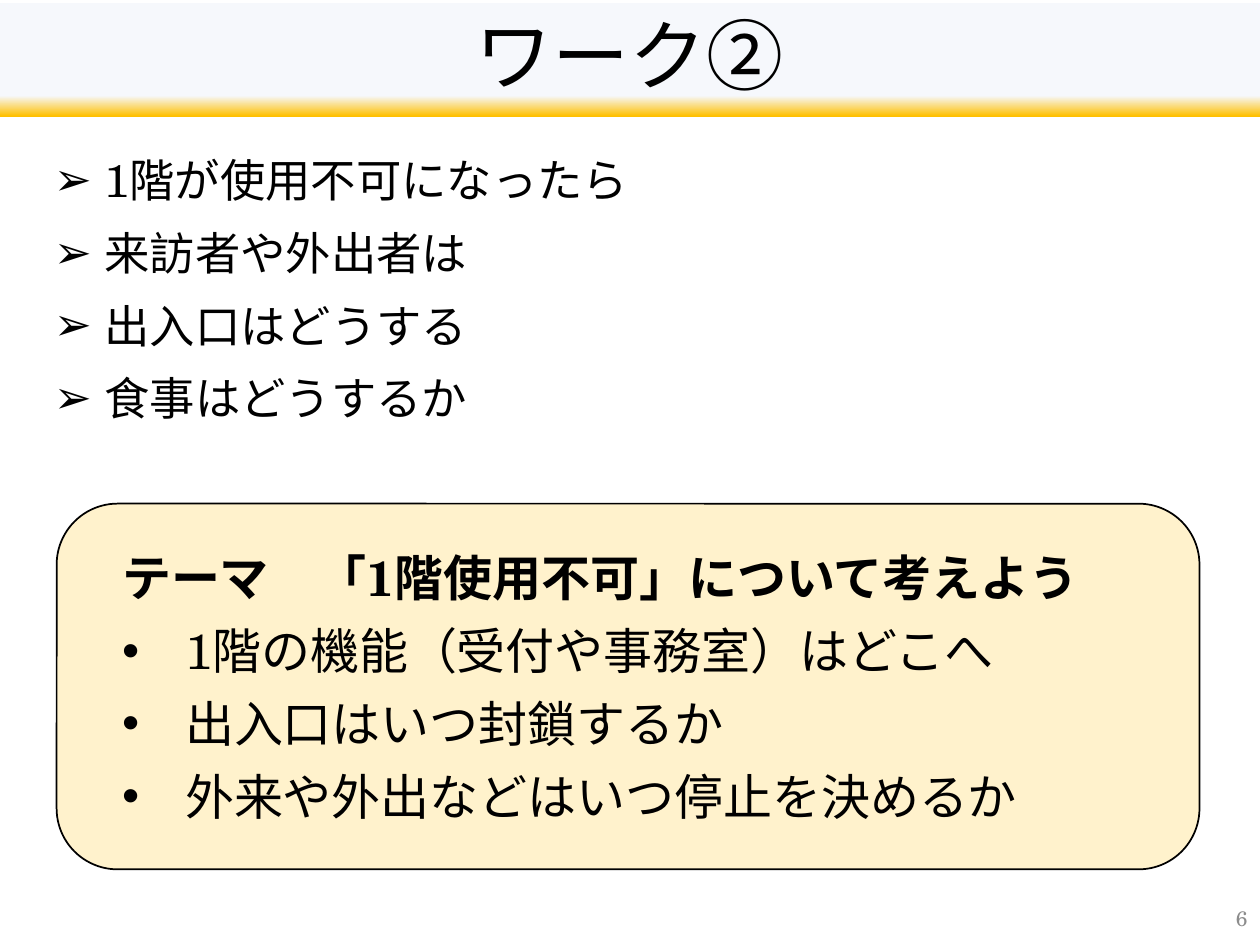
from dataclasses import dataclass

from lxml import etree
from pptx import Presentation
from pptx.dml.color import RGBColor
from pptx.enum.shapes import MSO_SHAPE
from pptx.enum.text import MSO_ANCHOR, PP_ALIGN
from pptx.oxml.ns import qn
from pptx.util import Inches, Pt

RECTANGLE, ROUNDED = MSO_SHAPE.RECTANGLE, MSO_SHAPE.ROUNDED_RECTANGLE
TOP, MIDDLE = MSO_ANCHOR.TOP, MSO_ANCHOR.MIDDLE
LEFT, CENTER, RIGHT = PP_ALIGN.LEFT, PP_ALIGN.CENTER, PP_ALIGN.RIGHT

BLACK = RGBColor(0x00, 0x00, 0x00)
GRAY = RGBColor(0x8C, 0x8C, 0x8C)
CREAM = RGBColor(0xFF, 0xF2, 0xCC)
PALE_BLUE = RGBColor(0xF6, 0xF8, 0xFC)
GOLD = RGBColor(0xFF, 0xC0, 0x00)

FONT = "TeX Gyre Schola"
WIDTH, HEIGHT = Inches(10), Inches(7.5)


@dataclass(frozen=True)
class Area:
    """A rectangle in shares of the slide's width and height."""
    left: float
    top: float
    width: float
    height: float

    def lengths(self) -> tuple[int, int, int, int]:
        return (int(self.left * WIDTH), int(self.top * HEIGHT),
                int(self.width * WIDTH), int(self.height * HEIGHT))


@dataclass(frozen=True)
class TextStyle:
    size: float
    color: RGBColor = BLACK
    align: PP_ALIGN = LEFT
    anchor: MSO_ANCHOR = MIDDLE
    line_spacing: float = 1.0
    space_after: float = 0
    indent: float = 0  # left margin in inches
    hanging: float = 0  # hanging bullet width in inches


@dataclass(frozen=True)
class Line:
    text: str
    bullet: str = ""
    bold: bool = False


TITLE_AREA = Area(0, 0.003, 1, 0.12)
QUESTION_AREA = Area(0.033, 0.147, 0.934, 0.31)
THEME_AREA = Area(0.045, 0.533, 0.907, 0.387)
NUMBER_AREA = Area(0.775, 0.945, 0.225, 0.053)

TITLE_STYLE = TextStyle(44, align=CENTER, line_spacing=0.9)
QUESTION_STYLE = TextStyle(25.9, anchor=TOP, line_spacing=1.14,
                           space_after=6, indent=0.4, hanging=0.4)
THEME_STYLE = TextStyle(28, space_after=8, indent=0.78, hanging=0.5)
NUMBER_STYLE = TextStyle(12, color=GRAY, align=RIGHT)

QUESTIONS = [Line(text, "➢") for text in (
    "1階が使用不可になったら",
    "来訪者や外出者は",
    "出入口はどうする",
    "食事はどうするか",
)]
THEME = [Line("テーマ　「1階使用不可」について考えよう", bold=True)] + [
    Line(text, "•") for text in (
        "1階の機能（受付や事務室）はどこへ",
        "出入口はいつ封鎖するか",
        "外来や外出などはいつ停止を決めるか",
    )]


def set_bullet(paragraph, bullet: str, style: TextStyle) -> None:
    properties = paragraph._p.get_or_add_pPr()
    properties.set("marL", str(Inches(style.indent)))
    properties.set("indent", str(-Inches(style.hanging)))
    if bullet:
        etree.SubElement(properties, qn("a:buFont")).set("typeface", "Arial")
        etree.SubElement(properties, qn("a:buChar")).set("char", bullet)
    else:
        etree.SubElement(properties, qn("a:buNone"))


def write_lines(shape, lines: list[Line], style: TextStyle) -> None:
    text_frame = shape.text_frame
    text_frame.word_wrap = True
    text_frame.vertical_anchor = style.anchor
    text_frame.text = "\n".join(line.text for line in lines)
    for paragraph, line in zip(text_frame.paragraphs, lines):
        set_bullet(paragraph, line.bullet, style)
        paragraph.alignment = style.align
        paragraph.line_spacing = style.line_spacing
        paragraph.space_after = Pt(style.space_after)
        for run in paragraph.runs:
            run.font.name = FONT
            run.font.size = Pt(style.size)
            run.font.bold = line.bold
            run.font.color.rgb = style.color


def add_panel(slide, kind: MSO_SHAPE, area: Area):
    shape = slide.shapes.add_shape(kind, *area.lengths())
    shape.shadow.inherit = False
    return shape


def add_text(slide, area: Area, lines: list[Line], style: TextStyle) -> None:
    write_lines(slide.shapes.add_textbox(*area.lengths()), lines, style)


def main() -> None:
    presentation = Presentation()
    presentation.slide_width, presentation.slide_height = WIDTH, HEIGHT
    slide = presentation.slides.add_slide(presentation.slide_layouts[6])

    # Title band fading to gold at its lower edge
    band = add_panel(slide, RECTANGLE, TITLE_AREA)
    band.line.fill.background()
    band.fill.gradient()
    band.fill.gradient_angle = 270
    stops = ((0.82, PALE_BLUE), (1, GOLD))
    for stop, (position, color) in zip(band.fill.gradient_stops, stops):
        stop.position = position
        stop.color.rgb = color
    write_lines(band, [Line("ワーク②")], TITLE_STYLE)

    # Questions and slide number
    add_text(slide, QUESTION_AREA, QUESTIONS, QUESTION_STYLE)
    add_text(slide, NUMBER_AREA, [Line("6")], NUMBER_STYLE)

    # Theme panel
    panel = add_panel(slide, ROUNDED, THEME_AREA)
    panel.fill.solid()
    panel.fill.fore_color.rgb = CREAM
    panel.line.color.rgb = BLACK
    panel.line.width = Pt(1)
    write_lines(panel, THEME, THEME_STYLE)

    presentation.save("out.pptx")


if __name__ == "__main__":
    main()
